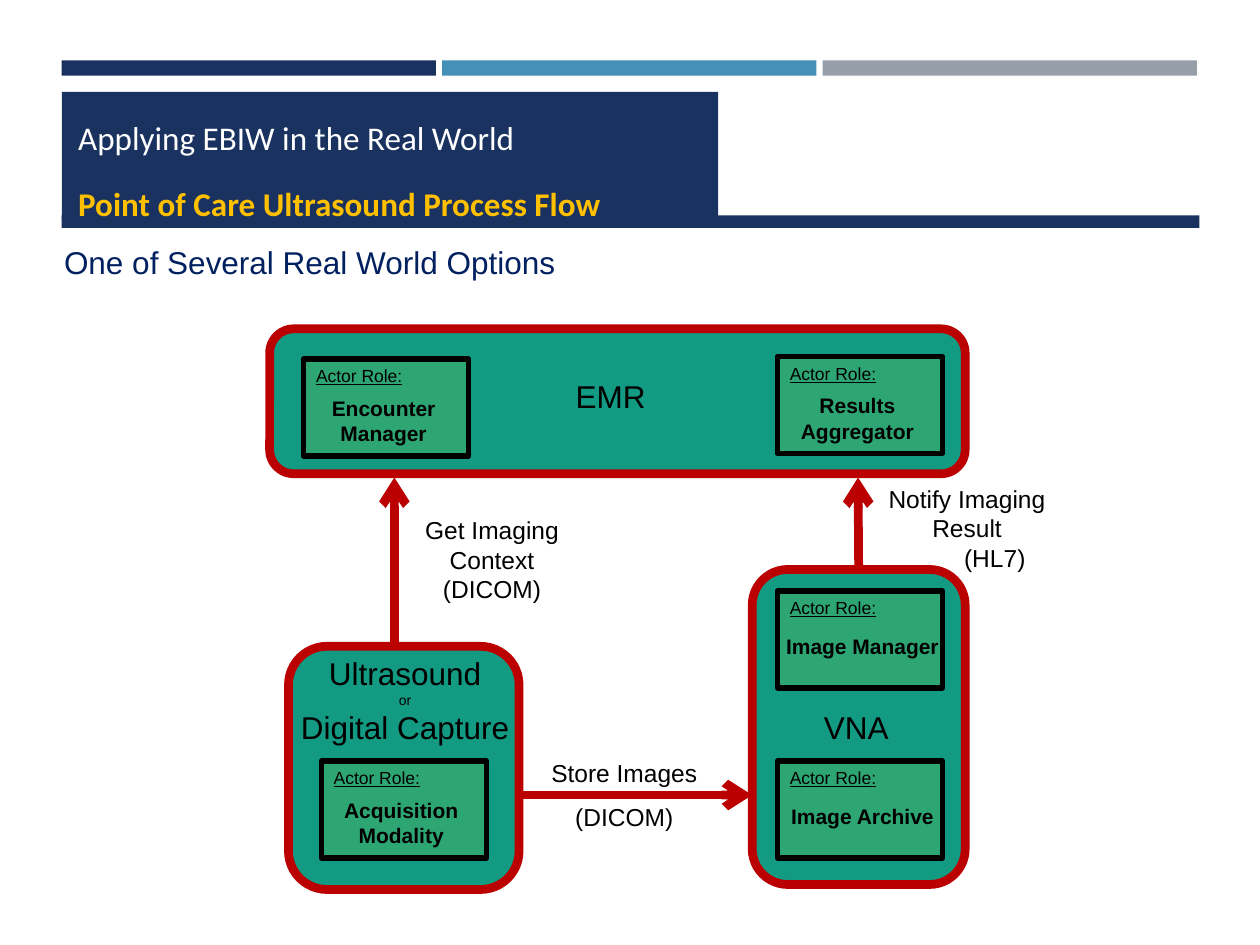
from lxml import etree
from pptx import Presentation
from pptx.dml.color import RGBColor
from pptx.enum.shapes import MSO_CONNECTOR, MSO_SHAPE
from pptx.enum.text import MSO_ANCHOR, MSO_AUTO_SIZE, PP_ALIGN
from pptx.oxml.ns import qn
from pptx.util import Inches, Pt

NAVY, TEAL, RED, BLACK = "1A3260", "129A83", "BA0000", "000000"
CARD_W, CARD_H = 1.31, 0.77
HEADING = {"size": 18}
LABEL = {"size": 14}
ROLE = {"size": 10, "underline": True}
ACTOR = {"size": 12, "bold": True}


def rgb(value):
    return RGBColor.from_string(value)


def style(font, size, color=BLACK, name="Arial", **extras):
    font.size, font.name, font.color.rgb = Pt(size), name, rgb(color)
    for key, value in extras.items():
        setattr(font, key, value)


def add_box(sl, kind, box, fill, line=None, width=0):
    s = sl.shapes.add_shape(kind, *map(Inches, box))
    s.shadow.inherit = False
    s.fill.solid()
    s.fill.fore_color.rgb = rgb(fill)
    if line:
        s.line.color.rgb, s.line.width = rgb(line), Pt(width)
    else:
        s.line.fill.background()
    return s


def write(tf, lines, align=None):
    """Fill a text frame with (text, format) lines, one paragraph each."""
    tf.word_wrap = True
    for i, (text, fmt) in enumerate(lines):
        p = tf.paragraphs[0] if i == 0 else tf.add_paragraph()
        p.alignment = align
        r = p.add_run()
        r.text = text
        style(r.font, **fmt)


def add_text(sl, box, lines, align=PP_ALIGN.LEFT):
    tf = sl.shapes.add_textbox(*map(Inches, box)).text_frame
    write(tf, lines, align)
    return tf


def add_system(sl, box):
    return add_box(sl, MSO_SHAPE.ROUNDED_RECTANGLE, box, TEAL, RED, 5)


def add_arrow(sl, start, end):
    c = sl.shapes.add_connector(MSO_CONNECTOR.STRAIGHT, *map(Inches, (*start, *end)))
    c.line.color.rgb, c.line.width = rgb(RED), Pt(5)
    etree.SubElement(c.line._get_or_add_ln(), qn("a:tailEnd"), type="arrow")
    etree.SubElement(c._element.spPr, qn("a:effectLst"))
    return c


def add_actor(sl, left, top, *names):
    """Tinted card with a role caption and the actor's name."""
    card = add_box(sl, MSO_SHAPE.RECTANGLE, (left, top, CARD_W, CARD_H),
                   "FFFF00", BLACK, 3)
    color = card.fill._xPr.find(qn("a:solidFill"))[0]
    etree.SubElement(color, qn("a:alpha"), val="12000")
    add_text(sl, (left, top, CARD_W, 0.27), [("Actor Role:", ROLE)])
    dx, dy = (0.02, 0.29) if len(names) == 1 else (-0.02, 0.24)
    name_w = 1.48
    add_text(sl, (left + (CARD_W - name_w) / 2 + dx, top + dy, name_w, 0.5),
             [(name, ACTOR) for name in names], PP_ALIGN.CENTER)


def add_header(sl, left, top):
    for i, color in enumerate((NAVY, "4590B8", "969FA7")):
        add_box(sl, MSO_SHAPE.RECTANGLE, (left + i * 3.02, top, 2.97, 0.12), color)
    add_box(sl, MSO_SHAPE.RECTANGLE, (left, top + 0.25, 5.21, 1.01), NAVY)
    add_box(sl, MSO_SHAPE.RECTANGLE, (left, top + 1.23, 9.03, 0.1), NAVY)

    title = sl.shapes.title
    box = (left + 0.03, top + 0.4, 7.03, 0.82)
    for key, value in zip(("left", "top", "width", "height"), box):
        setattr(title, key, Inches(value))
    sl.shapes._spTree.append(title._element)  # bring in front of the banner
    tf = title.text_frame
    tf.auto_size, tf.vertical_anchor = MSO_AUTO_SIZE.NONE, MSO_ANCHOR.TOP
    fmt = {"size": 18.9, "name": "Calibri"}
    write(tf, [("Applying EBIW in the Real World", {**fmt, "color": "FFFFFF"}),
               ("Point of Care Ultrasound Process Flow",
                {**fmt, "color": "FFC000", "bold": True})], PP_ALIGN.LEFT)
    tf.paragraphs[1].space_before = Pt(15)

    add_text(sl, (left - 0.08, top + 1.4, 5.91, 0.4),
             [("One of Several Real World Options", {**HEADING, "color": "002060"})])


def add_emr(sl, left, top):
    add_system(sl, (left, top, 5.52, 1.15))
    add_text(sl, (left + 2.33, top + 0.33, 0.99, 0.4), [("EMR", HEADING)])
    add_actor(sl, left + 0.27, top + 0.24, "Encounter", "Manager")
    add_actor(sl, left + 4.03, top + 0.22, "Results", "Aggregator")


def add_ultrasound(sl, left, top):
    add_system(sl, (left, top, 1.83, 1.93))
    add_text(sl, (left - 0.03, top + 0.01, 1.91, 0.84),
             [("Ultrasound", HEADING), ("or", {"size": 8}),
              ("Digital Capture", HEADING)], PP_ALIGN.CENTER)
    add_actor(sl, left + 0.26, top + 0.91, "Acquisition", "Modality")


def add_vna(sl, left, top):
    system = add_system(sl, (left, top, 1.69, 2.5))
    add_text(sl, (left + 0.47, top + 1.05, 0.82, 0.4), [("VNA", HEADING)])
    add_actor(sl, left + 0.2, top + 0.17, "Image Manager")
    add_actor(sl, left + 0.2, top + 1.52, "Image Archive")
    return system


def add_flows(sl, vna):
    add_arrow(sl, (3.13, 5.11), (3.13, 3.79))
    add_arrow(sl, (4.13, 6.31), (5.97, 6.31))
    add_arrow(sl, (6.81, 4.52), (6.81, 3.79)).begin_connect(vna, 0)

    def label(box, *lines):
        return add_text(sl, box, [(t, LABEL) for t in lines], PP_ALIGN.CENTER)

    label((3.06, 4.04, 1.69, 0.81), "Get Imaging", "Context", "(DICOM)")
    store = label((4.05, 5.97, 1.81, 0.67), "Store Images", "(DICOM)")
    store.paragraphs[1].space_before = Pt(8)
    notify = label((6.83, 3.79, 1.69, 0.81), "Notify Imaging Result", "(HL7)")
    notify.paragraphs[1]._p.get_or_add_pPr().set("marL", str(Inches(0.44)))


def main():
    prs = Presentation()
    prs.slide_width, prs.slide_height = Inches(10), Inches(7.5)
    sl = prs.slides.add_slide(prs.slide_layouts[5])
    add_header(sl, 0.49, 0.48)
    add_emr(sl, 2.14, 2.61)
    add_ultrasound(sl, 2.29, 5.13)
    vna = add_vna(sl, 5.97, 4.52)
    add_flows(sl, vna)
    prs.save("out.pptx")


if __name__ == "__main__":
    main()
